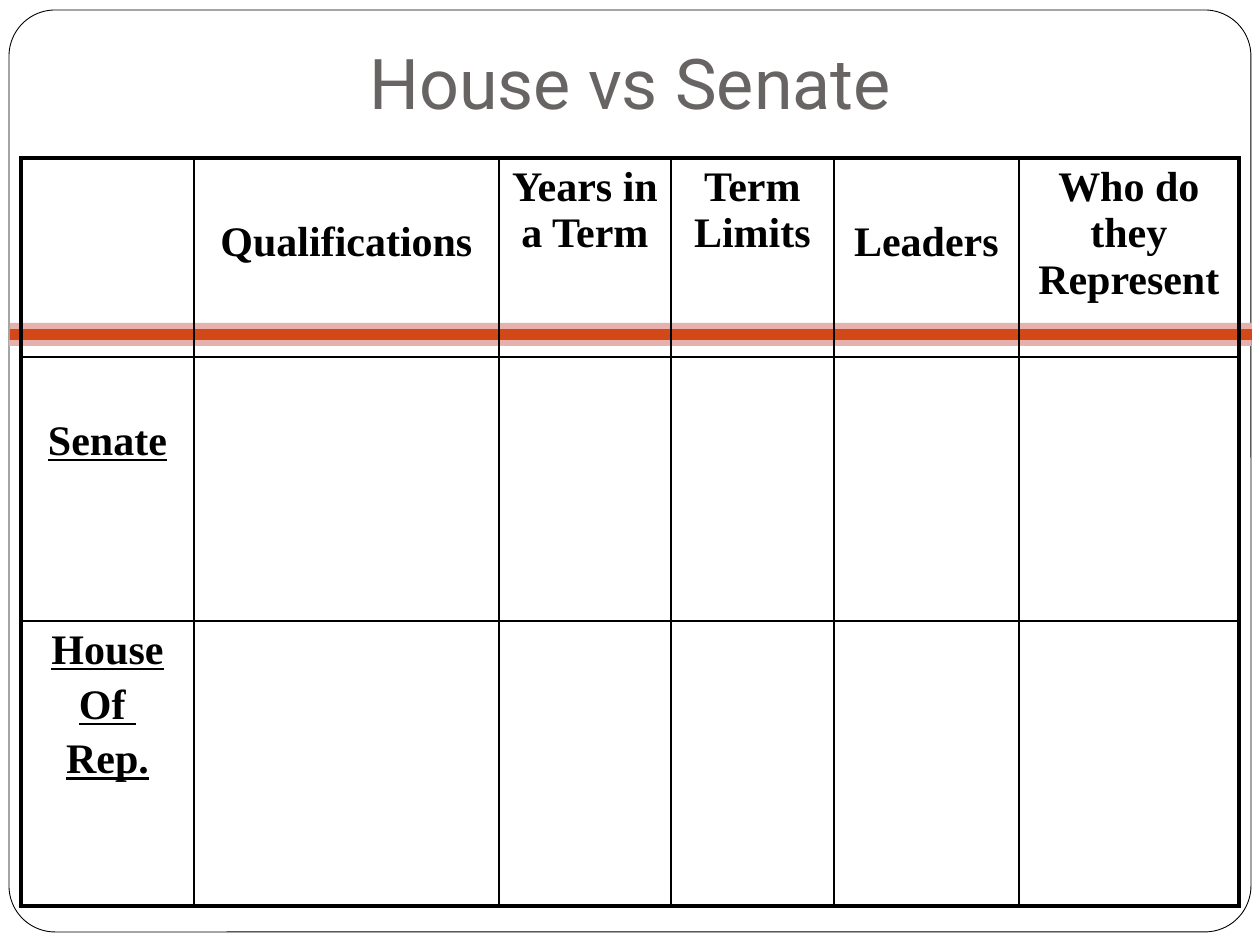
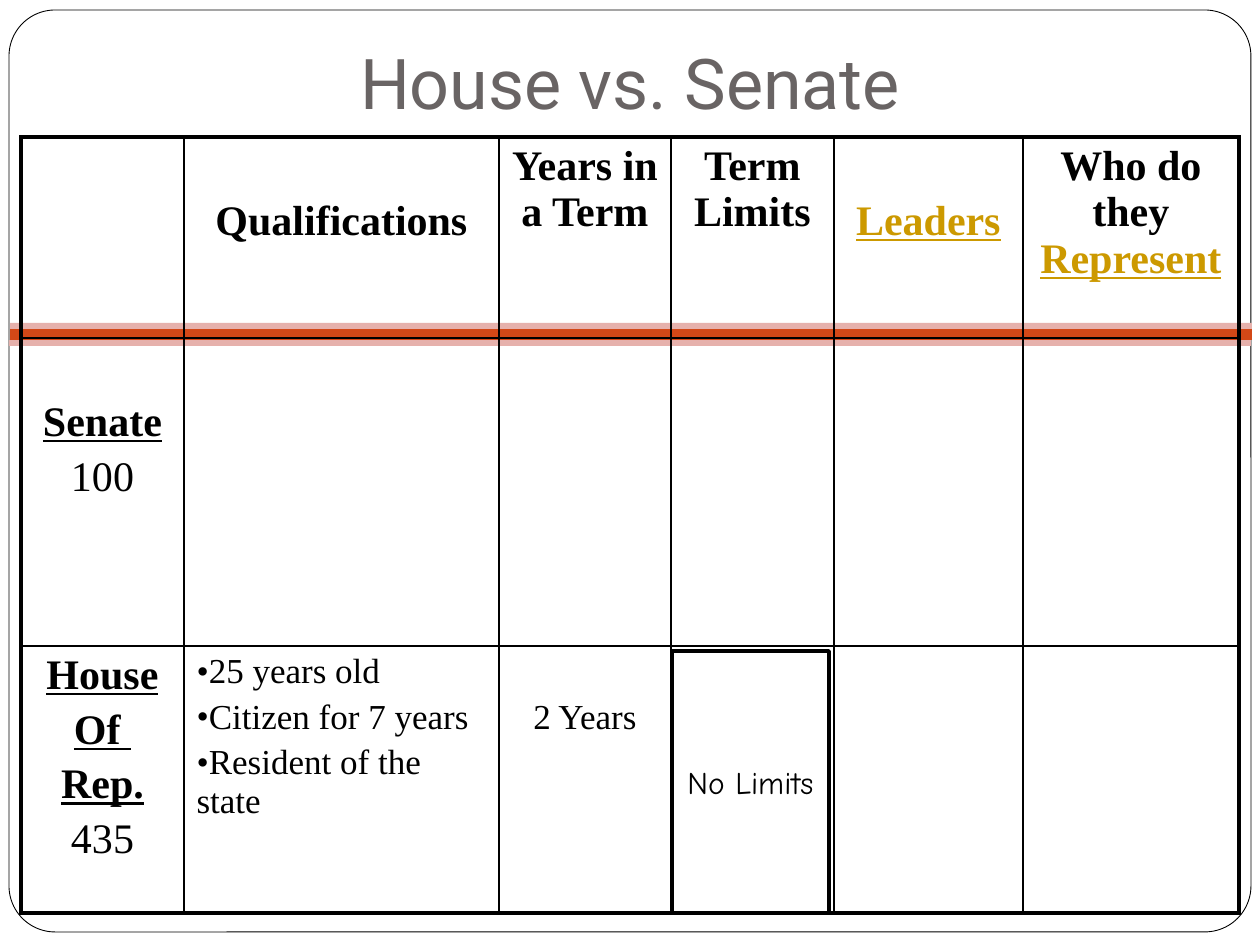
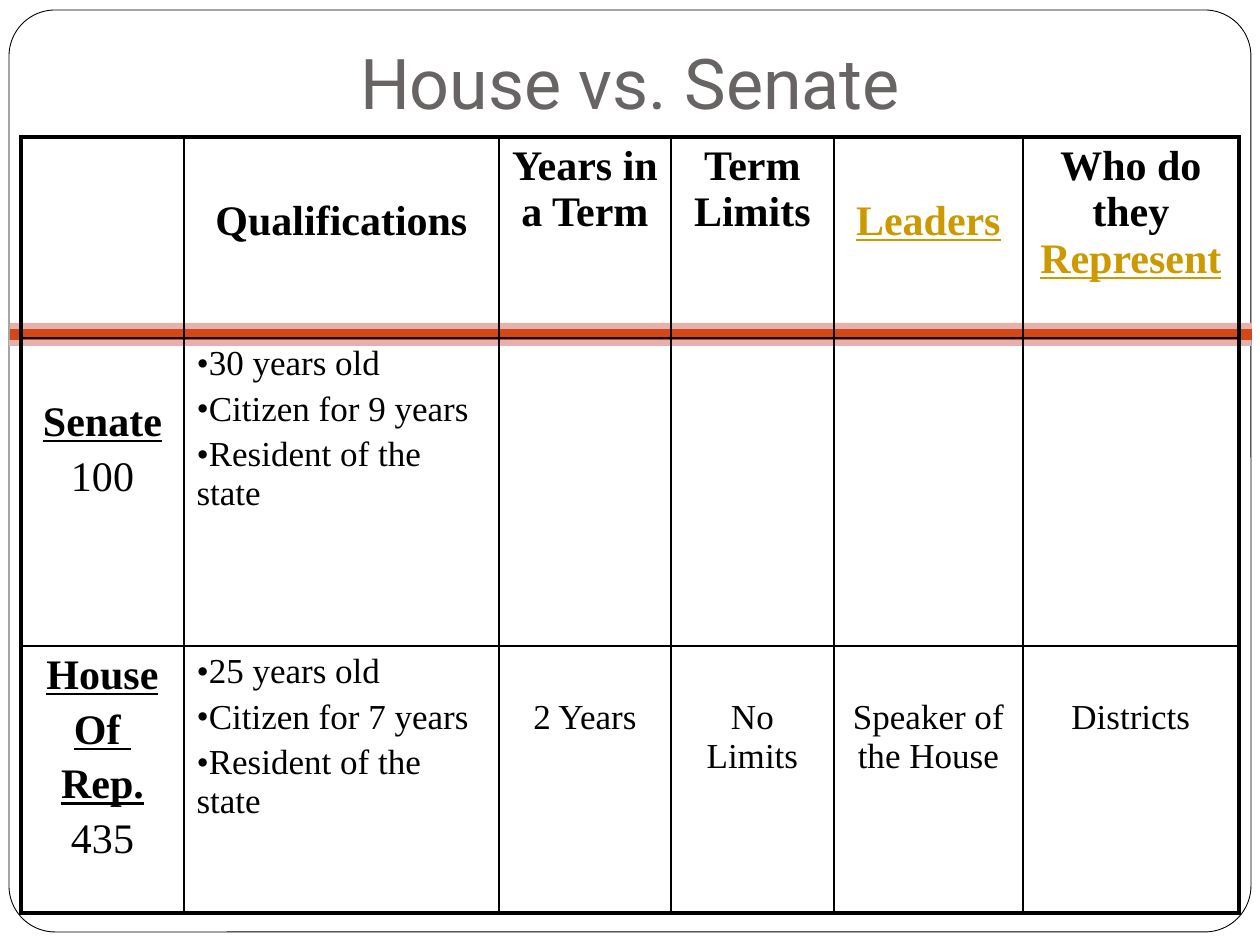
from collections import namedtuple

from lxml import etree
from pptx import Presentation
from pptx.dml.color import RGBColor
from pptx.enum.shapes import MSO_SHAPE
from pptx.enum.text import MSO_ANCHOR, MSO_AUTO_SIZE, PP_ALIGN
from pptx.oxml.ns import qn
from pptx.util import Emu, Pt

RECTANGLE = MSO_SHAPE.RECTANGLE
ROUNDED = MSO_SHAPE.ROUNDED_RECTANGLE
LEFT, CENTER = PP_ALIGN.LEFT, PP_ALIGN.CENTER
MIDDLE, BOTTOM = MSO_ANCHOR.MIDDLE, MSO_ANCHOR.BOTTOM
NO_AUTOFIT = MSO_AUTO_SIZE.NONE

BLACK = RGBColor(0x00, 0x00, 0x00)
WHITE = RGBColor(0xFF, 0xFF, 0xFF)
GREY = RGBColor(0x69, 0x64, 0x64)
ORANGE = RGBColor(0xD3, 0x48, 0x17)
PINK = RGBColor(0xE6, 0xB1, 0xAC)
GOLD = RGBColor(0xCC, 0x99, 0x00)

TITLE_FONT, TABLE_FONT, NOTE_FONT = "Roboto", "Times New Roman", "Comic Neue"
HEAD_SIZE, BODY_SIZE = 24, 20
THICK, THIN = 2.25, 1
PX = 914400 / 126
CELL_MARGIN = 6

Span = namedtuple("Span", "text bold underline colour", defaults=(False, False, BLACK))
Cell = namedtuple("Cell", "paras size lowered bulleted", defaults=(HEAD_SIZE, False, False))
EMPTY = Cell([])


def px(*lengths):
    """Turn px lengths into a list of EMU lengths."""
    return [Emu(round(length * PX)) for length in lengths]


def heading(*spans, lowered=False):
    """Describe a column heading of bold words or ready spans."""
    para = [Span(span, bold=True) if isinstance(span, str) else span for span in spans]
    return Cell([para], lowered=lowered)


def chamber(*names, seats=None, lowered=False):
    """Describe a row heading: underlined names, then the number of seats."""
    paras = [[Span(name, bold=True, underline=True)] for name in names]
    if seats:
        paras.append([Span(seats)])
    return Cell(paras, lowered=lowered)


def fact(text):
    """Describe a centred fact that starts one line down."""
    return Cell([[Span(text)]], BODY_SIZE, lowered=True)


def qualifications(age, citizenship):
    """Describe the bulleted qualifications of one chamber."""
    texts = [f"{age} years old", f"Citizen for {citizenship} years", "Resident of the state"]
    return Cell([[Span(text)] for text in texts], BODY_SIZE, bulleted=True)


def headings(leaders, represent):
    """List the cells of the heading row."""
    return [EMPTY, heading("Qualifications", lowered=True), heading("Years in a Term"),
            heading("Term Limits"), heading(leaders, lowered=True), heading(*represent)]


def style_font(font, name, size, colour):
    """Set the typeface, size and colour of a font."""
    font.name, font.size = name, Pt(size)
    font.color.rgb = colour


def add_box(slide, kind, bounds, fill, line=None, width=1):
    """Add a flat preset shape, outlined if a line colour is given."""
    box = slide.shapes.add_shape(kind, *px(*bounds))
    box.shadow.inherit = False
    box.fill.solid()
    box.fill.fore_color.rgb = fill
    if line is None:
        box.line.fill.background()
    else:
        box.line.color.rgb = line
        box.line.width = Pt(width)
    return box


def furnish_layout(layout, slide):
    """Give the layout its frame, its bands and its title position."""
    title, *footers = layout.placeholders
    for footer in footers:
        layout.shapes.element.remove(footer.element)
    frame = add_box(slide, ROUNDED, (9, 10, 1242, 922), WHITE, BLACK, 0.5)
    frame.adjustments[0] = 0.05
    bands = [add_box(slide, RECTANGLE, (left, top, 1242, height), colour)
             for left, top, height, colour in
             [(10, 328, 12, ORANGE), (10, 323, 6, PINK), (9, 340, 6, PINK)]]
    for index, shape in enumerate([frame, *bands], start=2):
        layout.shapes.element.insert(index, shape.element)
    title.left, title.top, title.width, title.height = px(94, 42, 1072, 95)


def set_title(slide, text):
    """Fill and format the title placeholder."""
    frame = slide.shapes.title.text_frame
    frame.text = text
    frame.auto_size = NO_AUTOFIT
    frame.vertical_anchor = BOTTOM
    frame.margin_top, frame.margin_bottom = px(6, 13)
    para = frame.paragraphs[0]
    para.alignment = CENTER
    style_font(para.runs[0].font, TITLE_FONT, 40, GREY)


def add_bullet(para):
    """Put a bullet directly before the paragraph text."""
    properties = para._p.get_or_add_pPr()
    properties.set("marL", "0")
    properties.set("indent", "0")
    etree.SubElement(properties, qn("a:buFont"), typeface=TABLE_FONT)
    etree.SubElement(properties, qn("a:buChar"), char="•")


def write_cell(cell, content):
    """Write the described paragraphs into a table cell."""
    drop = round(content.size * 2.3) if content.lowered else 0
    cell.margin_top = px(CELL_MARGIN + drop)[0]
    frame = cell.text_frame
    for index, spans in enumerate(content.paras):
        para = frame.add_paragraph() if index else frame.paragraphs[0]
        para.alignment = LEFT if content.bulleted else CENTER
        if index:
            para.space_before = Pt(content.size * 0.2)
        if content.bulleted:
            add_bullet(para)
        for span in spans:
            run = para.add_run()
            run.text = span.text
            style_font(run.font, TABLE_FONT, content.size, span.colour)
            run.font.bold, run.font.underline = span.bold, span.underline


def set_borders(cell, widths):
    """Draw the left, right, top and bottom borders of a cell."""
    properties = cell._tc.get_or_add_tcPr()
    for index, (side, width) in enumerate(zip("LRTB", widths)):
        line = etree.Element(qn(f"a:ln{side}"), w=str(Pt(width)))
        fill = etree.SubElement(line, qn("a:solidFill"))
        etree.SubElement(fill, qn("a:srgbClr"), val=str(BLACK))
        properties.insert(index, line)


def add_grid(slide, top, widths, heights, rows):
    """Add the comparison table with a thick outer border."""
    bounds = px(21, top, sum(widths), sum(heights))
    table = slide.shapes.add_table(len(heights), len(widths), *bounds).table
    table.first_row = table.horz_banding = False
    for column, width in zip(table.columns, px(*widths)):
        column.width = width
    for row, height in zip(table.rows, px(*heights)):
        row.height = height
    last_row, last_column = len(heights) - 1, len(widths) - 1
    for r, contents in enumerate(rows):
        for c, content in enumerate(contents):
            cell = table.cell(r, c)
            cell.fill.background()
            outer = (c == 0, c == last_column, r == 0, r == last_row)
            set_borders(cell, [THICK if edge else THIN for edge in outer])
            write_cell(cell, content)


def add_cover(slide, text):
    """Add the outlined box that covers one table cell."""
    box = add_box(slide, RECTANGLE, (672, 651, 157, 262), WHITE, BLACK, 2)
    frame = box.text_frame
    frame.text = text
    frame.word_wrap = False
    frame.vertical_anchor = MIDDLE
    para = frame.paragraphs[0]
    para.alignment = CENTER
    style_font(para.runs[0].font, NOTE_FONT, 18, BLACK)


def main():
    """Build the three comparison slides."""
    deck = Presentation()
    deck.slide_width, deck.slide_height = px(1260, 945)
    layout = deck.slide_layouts[5]
    blank, started, filled = [deck.slides.add_slide(layout) for _ in range(3)]
    furnish_layout(layout, blank)

    set_title(blank, "House vs Senate")
    add_grid(blank, 158, [173, 305, 172, 163, 185, 220], [199, 264, 285], [
        headings("Leaders", ["Who do they Represent"]),
        [chamber("Senate", lowered=True)] + [EMPTY] * 5,
        [chamber("House", "Of ", "Rep.")] + [EMPTY] * 5,
    ])

    top_row = headings(Span("Leaders", True, True, GOLD),
                       ["Who do they ", Span("Represent", True, True, GOLD)])
    senate = chamber("Senate", seats="100", lowered=True)
    house = [chamber("House", "Of ", "Rep.", seats="435"), qualifications(25, 7), fact("2 Years")]
    answers = [fact("No Limits"), fact("Speaker of the House"), fact("Districts")]
    versions = [
        (started, [senate] + [EMPTY] * 5, house + [EMPTY] * 3),
        (filled, [senate, qualifications(30, 9)] + [EMPTY] * 4, house + answers),
    ]
    for slide, senate_row, house_row in versions:
        set_title(slide, "House vs. Senate")
        add_grid(slide, 137, [163, 315, 172, 163, 189, 216], [201, 308, 267],
                 [top_row, senate_row, house_row])
    add_cover(started, "No Limits")

    deck.save("out.pptx")


if __name__ == "__main__":
    main()
